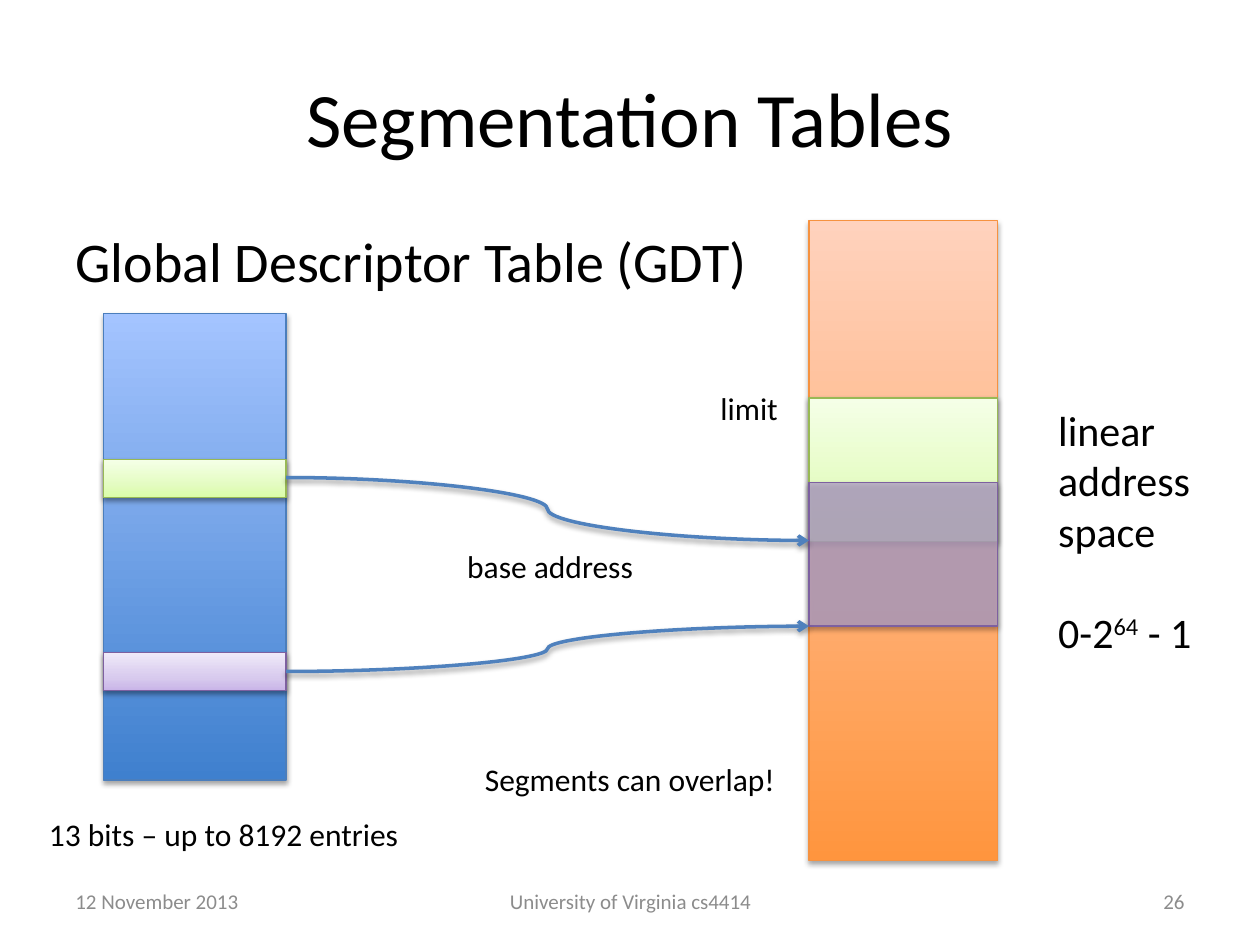
from typing import NamedTuple

from lxml.etree import SubElement
from pptx import Presentation
from pptx.dml.color import RGBColor
from pptx.enum.shapes import MSO_CONNECTOR as Connector, MSO_SHAPE as Preset
from pptx.enum.text import MSO_ANCHOR as Anchor, PP_ALIGN as Align
from pptx.oxml.ns import qn
from pptx.util import Inches, Pt

COLUMNS, ROWS = 100, 75
WIDTH, HEIGHT = Inches(10), Inches(7.5)
BLACK, GREY, ARROW = "000000", "8C8C8C", "4F81BD"
BLUES = ((0, "3F80CE"), (100, "A4C4FF"))
ORANGES = ((0, "FF953E"), (100, "FFD2BD"))
GREENS = ((0, "DAFDA7"), (35, "E4FCC2"), (100, "F5FFE7"))
PURPLES = ((0, "C9B5E8"), (35, "D8CBEE"), (100, "F0EAF9"))
OVERLAP = ((0, "B3A2C7"),)
GREEN_EDGE, PURPLE_EDGE = "98B955", "7D60A0"
TABLE_LEFT, TABLE_WIDTH = 8.2, 14.5
TABLE_RIGHT = TABLE_LEFT + TABLE_WIDTH
MEMORY_LEFT, MEMORY_WIDTH = 64.2, 15
ENTRY_HEIGHT, SEGMENT_HEIGHT = 3, 11.4


class Box(NamedTuple):
    """Place on the grid, in columns and rows."""
    left: float
    top: float
    width: float
    height: float


class Block(NamedTuple):
    """A filled stretch of the table or of memory."""
    box: Box
    stops: tuple
    edge: str
    alpha: int = 100
    shadow_alpha: int = 38
    shadow_distance: float = 1.6


class Label(NamedTuple):
    """A text with its place and format."""
    text: str
    box: Box
    style: dict


class Pointer(NamedTuple):
    """Row of a descriptor and row of its base address."""
    entry_row: float
    base_row: float


def x(columns: float) -> int:
    """Turn columns into a length."""
    return round(WIDTH * columns / COLUMNS)


def y(rows: float) -> int:
    """Turn rows into a length."""
    return round(HEIGHT * rows / ROWS)


def place(box: Box) -> tuple:
    """Turn a grid box into left, top, width and height."""
    return x(box.left), y(box.top), x(box.width), y(box.height)


def colour(value: str) -> RGBColor:
    """Turn a hex string into a colour."""
    return RGBColor.from_string(value)


def add_shadow(item, alpha: int = 38, distance: float = 1.6) -> None:
    """Give a shape or connector a soft shadow below it."""
    properties = item._element.spPr
    for old in properties.findall(qn("a:effectLst")):
        properties.remove(old)
    effects = SubElement(properties, qn("a:effectLst"))
    shadow = SubElement(effects, qn("a:outerShdw"), blurRad=str(Pt(3.1)),
                        dist=str(Pt(distance)), dir="5400000", rotWithShape="0")
    black = SubElement(shadow, qn("a:srgbClr"), val=BLACK)
    SubElement(black, qn("a:alpha"), val=str(alpha * 1000))


def fill_gradient(shape, stops: tuple) -> None:
    """Fill a shape upwards through the given stops."""
    shape.fill.gradient()
    shape.fill.gradient_angle = 90
    stop_list = shape._element.spPr.find(".//" + qn("a:gsLst"))
    for old in list(stop_list):
        stop_list.remove(old)
    for position, value in stops:
        stop = SubElement(stop_list, qn("a:gs"), pos=str(position * 1000))
        SubElement(stop, qn("a:srgbClr"), val=value)


def add_block(slide, block: Block) -> None:
    """Draw one block."""
    shape = slide.shapes.add_shape(Preset.RECTANGLE, *place(block.box))
    if len(block.stops) > 1:
        fill_gradient(shape, block.stops)
    else:
        shape.fill.solid()
        shape.fill.fore_color.rgb = colour(block.stops[0][1])
        tint = shape._element.spPr.find(qn("a:solidFill"))[0]
        SubElement(tint, qn("a:alpha"), val=str(block.alpha * 1000))
    shape.line.color.rgb = colour(block.edge)
    shape.line.width = Pt(0.75)
    add_shadow(shape, block.shadow_alpha, block.shadow_distance)


def add_pointer(slide, pointer: Pointer) -> None:
    """Draw a curved arrow from a descriptor to its base address."""
    curve = slide.shapes.add_connector(
        Connector.CURVE, x(TABLE_RIGHT), y(pointer.entry_row),
        x(MEMORY_LEFT), y(pointer.base_row))
    curve.line.color.rgb = colour(ARROW)
    curve.line.width = Pt(2)
    SubElement(curve.line._get_or_add_ln(), qn("a:tailEnd"), type="arrow")
    add_shadow(curve)


def add_text(slide, text: str, box: Box, *, size: float = 18, ink: str = BLACK,
             align: Align = Align.LEFT, anchor: Anchor = Anchor.TOP,
             wrap: bool = False, gap: float = 0) -> None:
    """Write paragraphs split by newlines, with ^ around superscripts."""
    frame = slide.shapes.add_textbox(*place(box)).text_frame
    frame.word_wrap = wrap
    frame.vertical_anchor = anchor
    for number, line in enumerate(text.split("\n")):
        paragraph = frame.add_paragraph() if number else frame.paragraphs[0]
        paragraph.alignment = align
        if number:
            paragraph.space_before = Pt(gap)
        for part, words in enumerate(line.split("^")):
            run = paragraph.add_run()
            run.text = words
            run.font.name = "Calibri"
            run.font.size = Pt(size)
            run.font.color.rgb = colour(ink)
            if part % 2:
                run.font._element.set("baseline", "30000")


FOOTER = dict(size=12, ink=GREY, anchor=Anchor.MIDDLE, wrap=True)
LABELS = (
    Label("Segmentation Tables", Box(5, 3, 90, 12.5),
          dict(size=44, align=Align.CENTER, anchor=Anchor.MIDDLE, wrap=True)),
    Label("12 November 2013", Box(5, 69.5, 23.3, 4), FOOTER),
    Label("University of Virginia cs4414", Box(34.2, 69.5, 31.7, 4),
          FOOTER | dict(align=Align.CENTER)),
    Label("26", Box(71.7, 69.5, 23.3, 4), FOOTER | dict(align=Align.RIGHT)),
    Label("Global Descriptor Table (GDT)", Box(5, 17.5, 56.3, 6.4), dict(size=32)),
    Label("13 bits – up to 8192 entries", Box(2.9, 64.2, 30.1, 4), {}),
    Label("Segments can overlap!", Box(37.5, 59.8, 25.3, 4), {}),
    Label("base address", Box(36.1, 42.9, 15.3, 4), {}),
    Label("limit", Box(56.2, 30.4, 6.6, 4), {}),
    Label("linear address space\n0-2^64^ - 1", Box(83, 31.6, 13.4, 21.2),
          dict(size=24, wrap=True, gap=29)),
)
BLOCKS = (
    Block(Box(TABLE_LEFT, 24.9, TABLE_WIDTH, 37), BLUES, "4B7EBC", 100, 35, 1.8),
    Block(Box(MEMORY_LEFT, 17.5, MEMORY_WIDTH, 50.8), ORANGES, "F69240", 100, 35, 1.8),
    Block(Box(MEMORY_LEFT, 31.6, MEMORY_WIDTH, SEGMENT_HEIGHT), GREENS, GREEN_EDGE),
    Block(Box(TABLE_LEFT, 36.5, TABLE_WIDTH, ENTRY_HEIGHT), GREENS, GREEN_EDGE),
    Block(Box(TABLE_LEFT, 51.8, TABLE_WIDTH, ENTRY_HEIGHT), PURPLES, PURPLE_EDGE),
    Block(Box(MEMORY_LEFT, 38.3, MEMORY_WIDTH, SEGMENT_HEIGHT), OVERLAP, PURPLE_EDGE, 79),
)
POINTERS = (Pointer(37.9, 42.9), Pointer(53.3, 49.7))


def main() -> None:
    """Build the slide and save it."""
    deck = Presentation()
    deck.slide_width, deck.slide_height = WIDTH, HEIGHT
    slide = deck.slides.add_slide(deck.slide_layouts[6])
    for block in BLOCKS:
        add_block(slide, block)
    for pointer in POINTERS:
        add_pointer(slide, pointer)
    for label in LABELS:
        add_text(slide, label.text, label.box, **label.style)
    deck.save("out.pptx")


if __name__ == "__main__":
    main()
